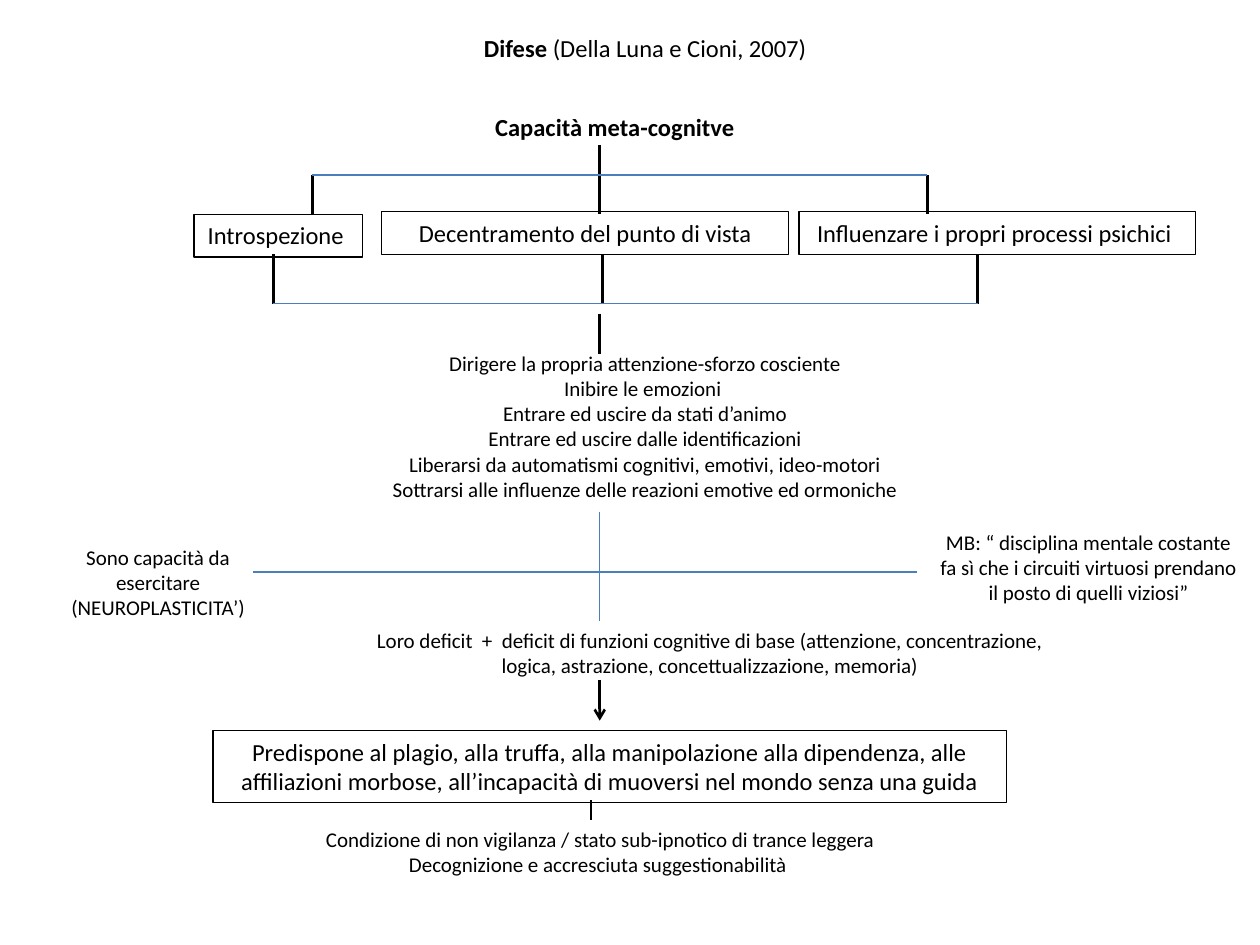
import pptx
import pptx.dml.color
import pptx.enum.shapes
import pptx.enum.text
import pptx.oxml.ns
import pptx.util
from lxml import etree

BLACK = pptx.dml.color.RGBColor(0x00, 0x00, 0x00)
BLUE = pptx.dml.color.RGBColor(0x4B, 0x7E, 0xBC)
COLUMNS, ROWS = 100, 75
ALIGN = pptx.enum.text.PP_ALIGN


class Diagram:
    """Style and current slide; lengths are columns and rows of a 100 x 75 grid."""

    def __init__(self, prs):
        self.cell_w = prs.slide_width / COLUMNS
        self.cell_h = prs.slide_height / ROWS
        self.s = prs.slides.add_slide(prs.slide_layouts[1])
        self.font = {"name": "Calibri", "bold": False}

    def place(self, x, y, w, h):
        return (round(x * self.cell_w), round(y * self.cell_h),
                round(w * self.cell_w), round(h * self.cell_h))

    def fill_text(self, sp, paragraphs, size, align=ALIGN.CENTER, bullets=True):
        """Each paragraph is a list of (text, bold) runs."""
        tf = sp.text_frame
        frame = {"word_wrap": True,
                 "auto_size": pptx.enum.text.MSO_AUTO_SIZE.SHAPE_TO_FIT_TEXT,
                 "vertical_anchor": pptx.enum.text.MSO_ANCHOR.TOP}
        for name, value in frame.items():
            setattr(tf, name, value)
        for i, runs in enumerate(paragraphs):
            p = tf.add_paragraph() if i else tf.paragraphs[0]
            p.alignment = align
            p.space_before = pptx.util.Pt(0)
            if not bullets:
                pPr = p._p.get_or_add_pPr()
                pPr.set("marL", "0")
                pPr.set("indent", "0")
                etree.SubElement(pPr, pptx.oxml.ns.qn("a:buNone"))
            for text, bold in runs:
                r = p.add_run()
                r.text = text
                style = {**self.font, "size": pptx.util.Pt(size), "bold": bold}
                for name, value in style.items():
                    setattr(r.font, name, value)
                r.font.color.rgb = BLACK

    def fit(self, sp, area):
        sp.left, sp.top, sp.width, sp.height = self.place(*area)

    def title(self, runs, area):
        sp = self.s.shapes.title
        self.fit(sp, area)
        self.fill_text(sp, [runs], 14, ALIGN.LEFT)

    def body(self, lines, area):
        sp = self.s.placeholders[1]
        self.fit(sp, area)
        self.fill_text(sp, [[(line, False)] for line in lines], 12, bullets=False)

    def label(self, lines, area, size=12, bold=False):
        sp = self.s.shapes.add_textbox(*self.place(*area))
        self.fill_text(sp, [[(line, bold)] for line in lines], size)

    def box(self, text, area):
        sp = self.s.shapes.add_shape(
            pptx.enum.shapes.MSO_SHAPE.RECTANGLE, *self.place(*area))
        sp.shadow.inherit = False
        sp.fill.background()
        sp.line.color.rgb = BLACK
        sp.line.width = pptx.util.Pt(0.75)
        self.fill_text(sp, [[(text, False)]], 14)

    def line(self, x1, y1, x2, y2, color=BLUE, width=0.75, arrow=False):
        sp = self.s.shapes.add_connector(
            pptx.enum.shapes.MSO_CONNECTOR.STRAIGHT, *self.place(x1, y1, x2, y2))
        sp.line.color.rgb = color
        sp.line.width = pptx.util.Pt(width)
        spPr = sp._element.spPr
        if arrow:
            etree.SubElement(spPr.get_or_add_ln(),
                             pptx.oxml.ns.qn("a:tailEnd"), type="arrow")
        etree.SubElement(spPr, pptx.oxml.ns.qn("a:effectLst"))

    def stem(self, x, top, bottom, arrow=False):
        """Thick black vertical line."""
        self.line(x, top, x, bottom, BLACK, 1.5, arrow)


def main():
    prs = pptx.Presentation()
    prs.slide_width = pptx.util.Inches(10)
    prs.slide_height = pptx.util.Inches(7.5)
    d = Diagram(prs)
    axis, fork, join, cross = 47.6, 13.9, 24.1, 45.4

    d.title([("Difese ", True), ("(Della Luna e Cioni, 2007)", False)],
            (37.4, 2.1, 29.1, 3.4))
    d.label(["Capacità meta-cognitve"], (35, 8.4, 27.6, 3.4), 14, True)

    for text, x, y, w in (
            ("Introspezione ", 15.4, 17, 13.4),
            ("Decentramento del punto di vista", 30.3, 16.8, 32.3),
            ("Influenzare i propri processi psichici ", 63.4, 16.8, 31.5)):
        d.box(text, (x, y, w, 3.4))

    d.stem(axis, 11.5, fork)
    for x in (24.8, axis, 73.6):
        d.stem(x, fork, 17)
    d.line(24.8, fork, 73.6, fork)
    for x in (21.7, 47.8, 77.6):
        d.stem(x, 20.2, join)
    d.line(21.7, join, 77.6, join)
    d.stem(axis, 24.9, 28.1)

    d.body(["Dirigere la propria attenzione-sforzo cosciente",
            "Inibire le emozioni ",
            "Entrare ed uscire da stati d’animo",
            "Entrare ed uscire dalle identificazioni",
            "Liberarsi da automatismi cognitivi, emotivi, ideo-motori",
            "Sottrarsi alle influenze delle reazioni emotive ed ormoniche"],
           (14.6, 27.3, 73.2, 13.1))

    d.line(axis, 40.6, axis, cross)
    d.line(axis, 44.6, axis, 49.3)
    d.line(20.1, cross, axis, cross)
    d.line(45.3, cross, 72.8, cross)
    d.label(["Sono capacità da esercitare (NEUROPLASTICITA’)"],
            (4.3, 42.7, 16.5, 7.1))
    d.label(["MB: “ disciplina mentale costante fa sì che i circuiti virtuosi "
             "prendano il posto di quelli viziosi”"], (73.6, 41.5, 25.6, 7.1))

    d.label(["Loro deficit  +  deficit di funzioni cognitive di base (attenzione, "
             "concentrazione, logica, astrazione, concettualizzazione, memoria)"],
            (27.2, 49.3, 58.3, 5))
    d.stem(axis, 54, 57.2, arrow=True)
    d.box("Predispone al plagio, alla truffa, alla manipolazione alla dipendenza, "
          "alle affiliazioni morbose, all’incapacità di muoversi nel mondo senza "
          "una guida", (16.9, 58, 63, 5.7))
    d.stem(46.9, 63.5, 65.1)
    d.label(["Condizione di non vigilanza / stato sub-ipnotico di trance leggera",
             "Decognizione e accresciuta suggestionabilità "],
            (18.5, 65.1, 58.3, 5))
    prs.save("out.pptx")


if __name__ == "__main__":
    main()
